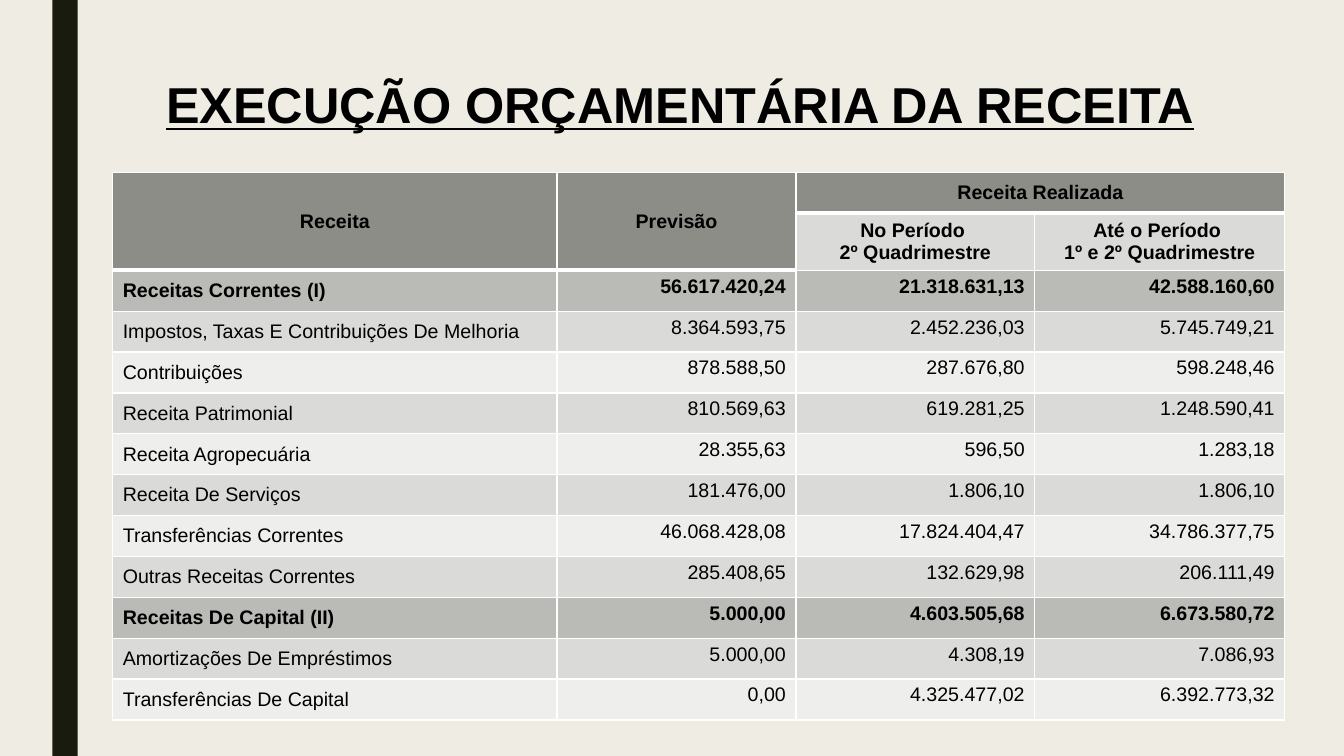
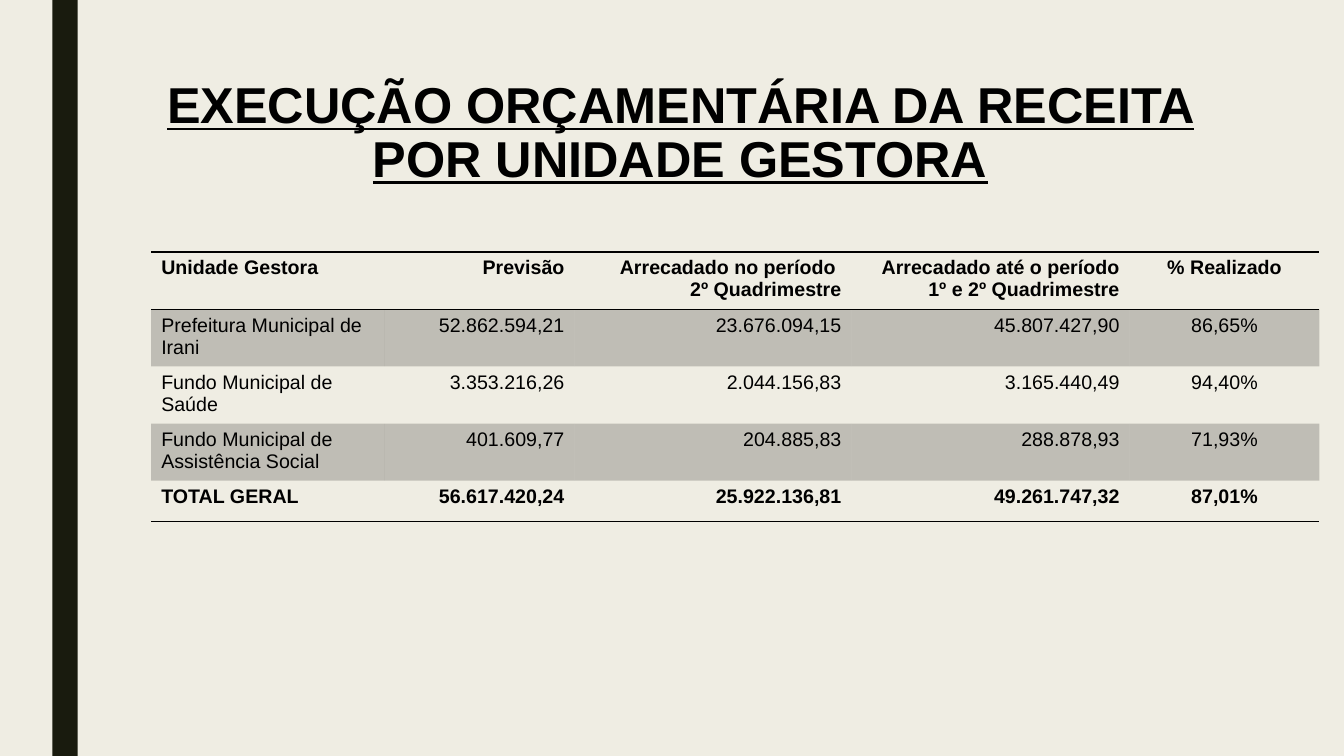
from lxml import etree
from pptx import Presentation
from pptx.dml.color import RGBColor
from pptx.enum import shapes, text
from pptx.oxml import ns
from pptx.util import Cm, Pt

COLORS = {
    "page": "EFEDE3",
    "band": "191B0E",
    "ink": "000000",
    "rule": "FFFFFF",
    "header": "8C8D86",
    "total": "BABBB6",
    "odd": "DADBD9",
    "even": "EEEEED",
}
FONT = "Arial"
PLAIN_TABLE_STYLE = "{2D5ABB26-0587-4C30-8999-92F81FD0307C}"
LEFT, CENTER, RIGHT = text.PP_ALIGN.LEFT, text.PP_ALIGN.CENTER, text.PP_ALIGN.RIGHT
ROW, TALL_ROW = 1.03, 1.37

REVENUE = [
    ("Receita", "Previsão", "Receita Realizada", ""),
    ("", "", "No Período \n2º Quadrimestre", "Até o Período \n1º e 2º Quadrimestre"),
    ("Receitas Correntes (I)", "56.617.420,24", "21.318.631,13", "42.588.160,60"),
    ("Impostos, Taxas E Contribuições De Melhoria", "8.364.593,75", "2.452.236,03", "5.745.749,21"),
    ("Contribuições", "878.588,50", "287.676,80", "598.248,46"),
    ("Receita Patrimonial", "810.569,63", "619.281,25", "1.248.590,41"),
    ("Receita Agropecuária", "28.355,63", "596,50", "1.283,18"),
    ("Receita De Serviços", "181.476,00", "1.806,10", "1.806,10"),
    ("Transferências Correntes", "46.068.428,08", "17.824.404,47", "34.786.377,75"),
    ("Outras Receitas Correntes", "285.408,65", "132.629,98", "206.111,49"),
    ("Receitas De Capital (II)", "5.000,00", "4.603.505,68", "6.673.580,72"),
    ("Amortizações De Empréstimos", "5.000,00", "4.308,19", "7.086,93"),
    ("Transferências De Capital", "0,00", "4.325.477,02", "6.392.773,32"),
]
REVENUE_TOTALS = (2, 10)

UNITS = [
    ("Unidade Gestora", "Previsão", "Arrecadado no período \n2º Quadrimestre",
     "Arrecadado até o período 1º e 2º Quadrimestre", "% Realizado"),
    ("Prefeitura Municipal de Irani", "52.862.594,21", "23.676.094,15", "45.807.427,90", "86,65%"),
    ("Fundo Municipal de Saúde", "3.353.216,26", "2.044.156,83", "3.165.440,49", "94,40%"),
    ("Fundo Municipal de Assistência Social", "401.609,77", "204.885,83", "288.878,93", "71,93%"),
    ("TOTAL GERAL", "56.617.420,24", "25.922.136,81", "49.261.747,32", "87,01%"),
]


def color(name):
    return RGBColor.from_string(COLORS[name])


def write(frame, content, size=14, bold=False, underline=False, align=LEFT, spacing=None):
    """Fill a text frame, one paragraph for each line of content."""
    for index, line in enumerate(content.split("\n")):
        para = frame.paragraphs[0] if index == 0 else frame.add_paragraph()
        para.alignment = align
        para.line_spacing = spacing
        span = para.add_run()
        span.text = line
        font = span.font
        font.name, font.size, font.bold, font.underline = FONT, Pt(size), bold, underline
        font.color.rgb = color("ink")


def paint(cell, name, opacity=100):
    cell.fill.solid()
    cell.fill.fore_color.rgb = color(name)
    if opacity < 100:
        shade = cell._tc.tcPr.find(".//" + ns.qn("a:srgbClr"))
        etree.SubElement(shade, ns.qn("a:alpha"), val=str(opacity * 1000))


def border(cell, name, **widths):
    """Draw cell edges, with widths in points for L, R, T and B; call before paint."""
    properties = cell._tc.get_or_add_tcPr()
    for side in "LRTB":
        if side in widths:
            line = etree.SubElement(properties, ns.qn("a:ln" + side), w=str(Pt(widths[side])))
            fill = etree.SubElement(line, ns.qn("a:solidFill"))
            etree.SubElement(fill, ns.qn("a:srgbClr"), val=COLORS[name])


def add_page(deck, title):
    page = deck.slides.add_slide(deck.slide_layouts[6])
    # Side band
    band = page.shapes.add_shape(shapes.MSO_SHAPE.RECTANGLE, Cm(1.32), 0, Cm(0.64), deck.slide_height)
    band.shadow.inherit = False
    band.fill.solid()
    band.fill.fore_color.rgb = color("band")
    band.line.fill.background()
    # Title
    box = page.shapes.add_textbox(Cm(3.81), Cm(1.9), Cm(26.67), Cm(4.11))
    box.text_frame.word_wrap = True
    write(box.text_frame, title, size=36, bold=True, underline=True, align=CENTER, spacing=0.89)
    return page


def add_grid(page, left, top, widths, heights):
    """Add an unstyled table, with all lengths in centimetres."""
    frame = page.shapes.add_table(len(heights), len(widths), Cm(left), Cm(top),
                                  Cm(sum(widths)), Cm(sum(heights)))
    table = frame.table
    table.horz_banding = False
    table._tbl.tblPr.find(ns.qn("a:tableStyleId")).text = PLAIN_TABLE_STYLE
    for column, width in zip(table.columns, widths):
        column.width = Cm(width)
    for row, height in zip(table.rows, heights):
        row.height = Cm(height)
    return table


def add_revenue_table(page):
    heights = [ROW, TALL_ROW] + [ROW] * (len(REVENUE) - 2)
    table = add_grid(page, 2.84, 4.34, [11.2, 6.02, 6.02, 6.3], heights)
    for r, values in enumerate(REVENUE):
        heading, total = r < 2, r in REVENUE_TOTALS
        for c, value in enumerate(values):
            cell = table.cell(r, c)
            # Thick rule under the header, which is two rows deep in the first columns
            last_header = 1 if c < 2 else 0
            border(cell, "rule", L=1, R=1,
                   T=3 if r == last_header + 1 else 1,
                   B=3 if r == last_header or (r == 0 and c < 2) else 1)
            if r <= last_header:
                paint(cell, "header")
            else:
                paint(cell, "total" if total else "odd" if r % 2 else "even")
            if heading or c == 0:
                cell.vertical_anchor = text.MSO_ANCHOR.MIDDLE
            if value:
                write(cell.text_frame, value, bold=heading or total,
                      align=CENTER if heading else RIGHT if c else LEFT)
    # Header spans
    for first, last in (((0, 0), (1, 0)), ((0, 1), (1, 1)), ((0, 2), (0, 3))):
        table.cell(*first).merge(table.cell(*last))


def add_units_table(page):
    aligns = [LEFT, RIGHT, RIGHT, RIGHT, CENTER]
    last = len(UNITS) - 1
    table = add_grid(page, 3.81, 6.35, [5.89, 4.78, 6.98, 7.01, 4.78], [TALL_ROW] * last + [ROW])
    rules = {0: {"T": 1, "B": 1}, last: {"B": 1}}
    for r, values in enumerate(UNITS):
        for c, value in enumerate(values):
            cell = table.cell(r, c)
            border(cell, "ink", **rules.get(r, {}))
            if r % 2:
                paint(cell, "ink", opacity=20)
            else:
                cell.fill.background()
            write(cell.text_frame, value, bold=r in rules, align=aligns[c])


def main():
    deck = Presentation()
    deck.slide_width, deck.slide_height = Cm(33.87), Cm(19.05)
    # Shared background
    background = deck.slide_master.background.fill
    background.solid()
    background.fore_color.rgb = color("page")

    add_revenue_table(add_page(deck, "EXECUÇÃO ORÇAMENTÁRIA DA RECEITA"))
    add_units_table(add_page(deck, "EXECUÇÃO ORÇAMENTÁRIA DA RECEITA POR UNIDADE GESTORA"))
    deck.save("out.pptx")


if __name__ == "__main__":
    main()
